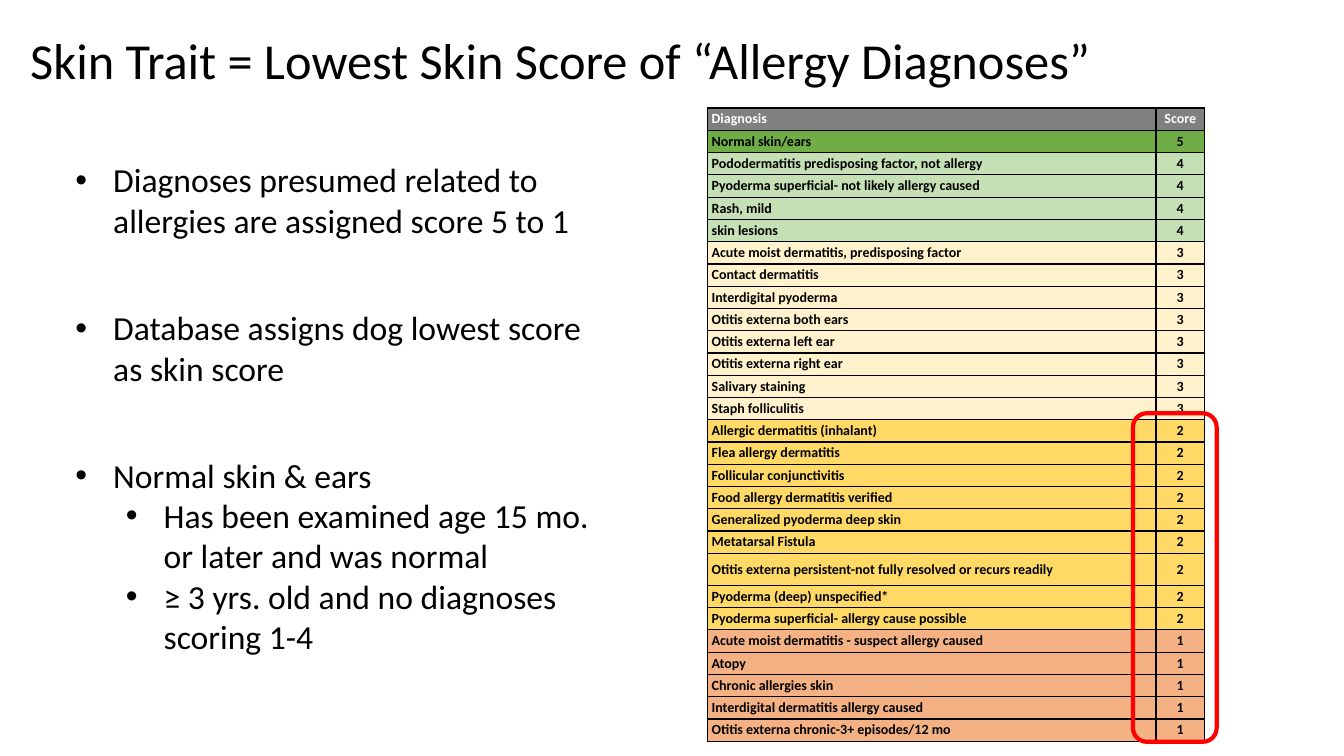
"""Build the skin trait scoring slide."""
import pptx
import pptx.dml.color
import pptx.enum.shapes
import pptx.enum.text
import pptx.oxml
import pptx.oxml.ns
import pptx.util

Pt = pptx.util.Pt
ALIGN = pptx.enum.text.PP_ALIGN
ANCHOR = pptx.enum.text.MSO_ANCHOR
AUTO_SIZE = pptx.enum.text.MSO_AUTO_SIZE

COLORS = {
    "text": "000000", "header_text": "FFFFFF", "border": "000000",
    "highlight": "FF0000", "Score": "808080", "5": "70AD47",
    "4": "C5E0B4", "3": "FFF2CC", "2": "FFD966", "1": "F4B183",
}

DIAGNOSES = {
    "Score": ["Diagnosis"],
    "5": ["Normal skin/ears"],
    "4": [
        "Pododermatitis predisposing factor, not allergy",
        "Pyoderma superficial- not likely allergy caused",
        "Rash, mild",
        "skin lesions",
    ],
    "3": [
        "Acute moist dermatitis, predisposing factor",
        "Contact dermatitis",
        "Interdigital pyoderma",
        "Otitis externa both ears",
        "Otitis externa left ear",
        "Otitis externa right ear",
        "Salivary staining",
        "Staph folliculitis",
    ],
    "2": [
        "Allergic dermatitis (inhalant)",
        "Flea allergy dermatitis",
        "Follicular conjunctivitis",
        "Food allergy dermatitis verified",
        "Generalized pyoderma deep skin",
        "Metatarsal Fistula",
        "Otitis externa persistent-not fully resolved or recurs readily",
        "Pyoderma (deep) unspecified*",
        "Pyoderma superficial- allergy cause possible",
    ],
    "1": [
        "Acute moist dermatitis - suspect allergy caused",
        "Atopy",
        "Chronic allergies skin",
        "Interdigital dermatitis allergy caused",
        "Otitis externa chronic-3+ episodes/12 mo",
    ],
}
TALL_ROW = "Otitis externa persistent-not fully resolved or recurs readily"

BULLET_GROUPS = [
    (110.2, 65.5, [("Diagnoses presumed related to allergies are assigned score 5 to 1", 0)]),
    (216, 65.5, [("Database assigns dog lowest score as skin score", 0)]),
    (321.1, 152.6, [
        ("Normal skin & ears", 0),
        ("Has been examined age 15 mo. or later and was normal", 1),
        ("≥ 3 yrs. old and no diagnoses scoring 1-4", 1),
    ]),
]


class SlideBuilder:
    font_name = "Calibri"

    def __init__(self, slide):
        self.slide = slide

    def color(self, name):
        return pptx.dml.color.RGBColor.from_string(COLORS[name])

    def xml(self, text):
        return pptx.oxml.parse_xml(text.replace(" ", f" {pptx.oxml.ns.nsdecls('a')} ", 1))

    def format_runs(self, paragraph, size, color="text", bold=False):
        for run in paragraph.runs:
            run.font.name = self.font_name
            run.font.size = Pt(size)
            run.font.bold = bold
            run.font.color.rgb = self.color(color)

    def title(self, text, left, top, width, height):
        shape = self.slide.shapes.title
        shape.left, shape.top, shape.width, shape.height = map(Pt, (left, top, width, height))
        frame = shape.text_frame
        frame.text = text
        frame.auto_size = AUTO_SIZE.NONE
        frame.vertical_anchor = ANCHOR.MIDDLE
        paragraph = frame.paragraphs[0]
        paragraph.alignment = ALIGN.LEFT
        paragraph.line_spacing = 0.9
        self.format_runs(paragraph, 36)

    def bullets(self, items, left, top, width, height):
        shape = self.slide.shapes.add_textbox(*map(Pt, (left, top, width, height)))
        frame = shape.text_frame
        frame.word_wrap = True
        frame.auto_size = AUTO_SIZE.SHAPE_TO_FIT_TEXT
        frame.text = "\n".join(text for text, level in items)
        for paragraph, (text, level) in zip(frame.paragraphs, items):
            paragraph.level = level
            self.format_runs(paragraph, 24)
            properties = paragraph._p.get_or_add_pPr()
            properties.set("marL", str(Pt(27 + 36 * level)))
            properties.set("indent", str(Pt(-27)))
            properties.append(self.xml('<a:buFont typeface="Arial"/>'))
            properties.append(self.xml('<a:buChar char="•"/>'))

    def cell(self, cell, text, fill, color, alignment):
        cell.text_frame.text = text
        cell.vertical_anchor = ANCHOR.MIDDLE
        cell.margin_left = cell.margin_right = Pt(3)
        cell.margin_top = cell.margin_bottom = Pt(1.5)
        paragraph = cell.text_frame.paragraphs[0]
        paragraph.alignment = alignment
        self.format_runs(paragraph, 10, color, bold=True)
        properties = cell._tc.get_or_add_tcPr()
        for side in "LRTB":
            properties.append(self.xml(
                f'<a:ln{side} w="{Pt(1)}"><a:solidFill><a:srgbClr val="{COLORS["border"]}"/>'
                f'</a:solidFill></a:ln{side}>'))
        cell.fill.solid()
        cell.fill.fore_color.rgb = self.color(fill)

    def score_table(self, diagnoses, left, top, widths, row_height, tall_height):
        rows = [(name, score) for score, names in diagnoses.items() for name in names]
        heights = [tall_height if name == TALL_ROW else row_height for name, score in rows]
        shape = self.slide.shapes.add_table(
            len(rows), len(widths), *map(Pt, (left, top, sum(widths), sum(heights))))
        table = shape.table
        for column, width in zip(table.columns, widths):
            column.width = Pt(width)
        for index, (name, score) in enumerate(rows):
            table.rows[index].height = Pt(heights[index])
            color = "header_text" if score == "Score" else "text"
            self.cell(table.cell(index, 0), name, score, color, ALIGN.LEFT)
            self.cell(table.cell(index, 1), score, score, color, ALIGN.CENTER)

    def highlight(self, left, top, width, height):
        shape = self.slide.shapes.add_shape(
            pptx.enum.shapes.MSO_SHAPE.ROUNDED_RECTANGLE, *map(Pt, (left, top, width, height)))
        shape.shadow.inherit = False
        shape.fill.background()
        shape.line.color.rgb = self.color("highlight")
        shape.line.width = Pt(3)


def main():
    presentation = pptx.Presentation()
    presentation.slide_width = Pt(960)
    presentation.slide_height = Pt(540)
    title_only = presentation.slide_layouts.get_by_name("Title Only")
    builder = SlideBuilder(presentation.slides.add_slide(title_only))
    builder.title("Skin Trait = Lowest Skin Score of “Allergy Diagnoses”", 14.4, 10.8, 793.4, 68.4)
    builder.score_table(DIAGNOSES, 505.4, 77.2, [320.4, 34.6], 15.93, 22.9)
    for top, height, items in BULLET_GROUPS:
        builder.bullets(items, 46.8, top, 388.8, height)
    builder.highlight(809.3, 295.2, 59.8, 234.7)
    presentation.save("out.pptx")


if __name__ == "__main__":
    main()
